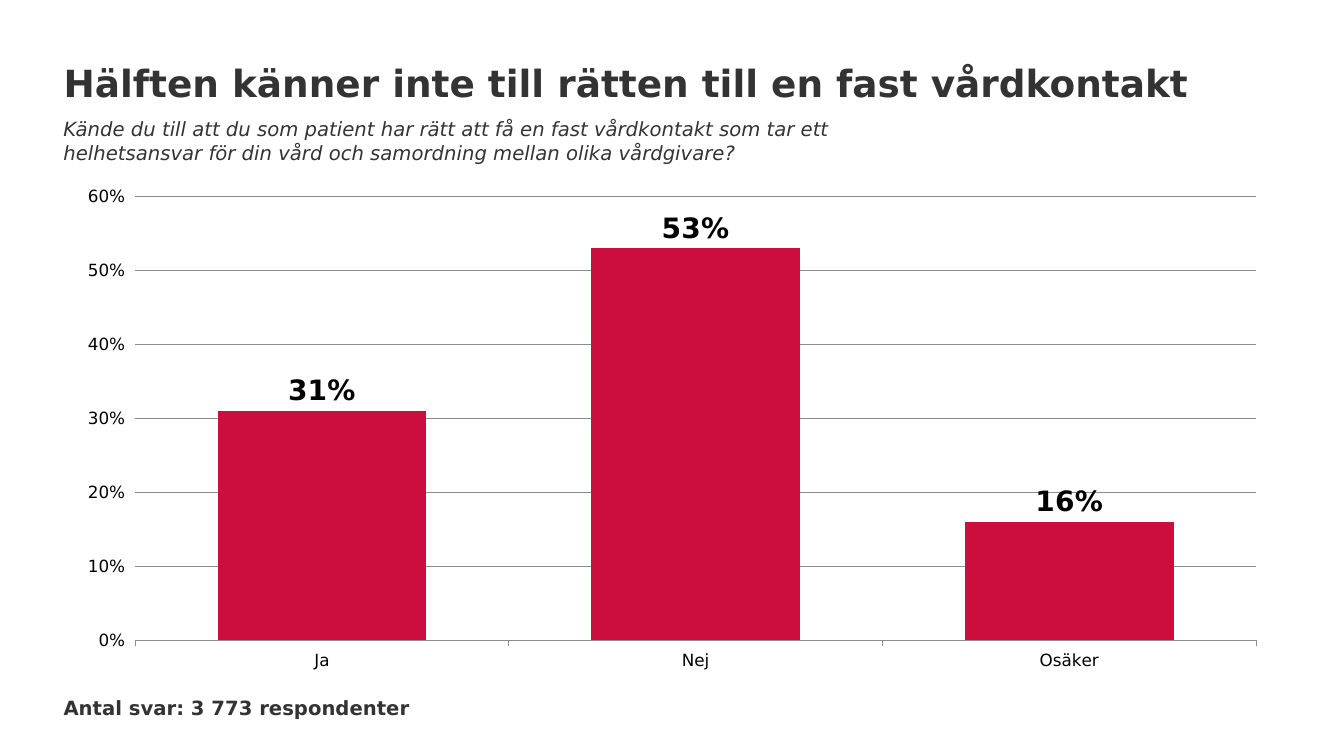
import pptx
import pptx.chart.data
import pptx.dml.color
import pptx.enum.chart
import pptx.enum.text
import pptx.util
from pptx.util import Inches, Pt

# Content
HEADING = "Hälften känner inte till rätten till en fast vårdkontakt"
QUESTION = ("Kände du till att du som patient har rätt att få en fast vårdkontakt som tar ett "
            "helhetsansvar för din vård och samordning mellan olika vårdgivare?")
RESPONDENTS = "Antal svar: 3 773 respondenter"
ANSWERS = {"Ja": 0.31, "Nej": 0.53, "Osäker": 0.16}

# Style
FONT = "DejaVu Sans"
INK = pptx.dml.color.RGBColor(0x33, 0x33, 0x33)
BLACK = pptx.dml.color.RGBColor(0x00, 0x00, 0x00)
GREY = pptx.dml.color.RGBColor(0x8C, 0x8C, 0x8C)
RED = pptx.dml.color.RGBColor(0xCB, 0x0E, 0x3E)

# Layout in inches
WIDTH, HEIGHT = 13.33, 7.5
MARGIN = 0.63
CONTENT_WIDTH = WIDTH - 2 * MARGIN


def set_font(font, size, color, bold=False, italic=False):
    font.name, font.size = FONT, Pt(size)
    font.bold, font.italic = bold, italic
    font.color.rgb = color


def fill_text(box, text, size, bold=False, italic=False):
    frame = box.text_frame
    frame.word_wrap = True
    frame.auto_size = pptx.enum.text.MSO_AUTO_SIZE.NONE
    frame.vertical_anchor = pptx.enum.text.MSO_ANCHOR.TOP
    frame.margin_left = frame.margin_right = frame.margin_top = frame.margin_bottom = 0
    frame.text = text
    paragraph = frame.paragraphs[0]
    paragraph.alignment = pptx.enum.text.PP_ALIGN.LEFT
    set_font(paragraph.font, size, INK, bold, italic)


def place(top, width, height):
    return Inches(MARGIN), Inches(top), Inches(width), Inches(height)


deck = pptx.Presentation()
deck.slide_width, deck.slide_height = Inches(WIDTH), Inches(HEIGHT)
slide = deck.slides.add_slide(deck.slide_layouts[5])

# Heading, question and number of respondents
heading = slide.shapes.title
heading.left, heading.top, heading.width, heading.height = place(0.6, CONTENT_WIDTH, 0.45)
fill_text(heading, HEADING, 26.7, bold=True)
question = slide.shapes.add_textbox(*place(1.16, 7.63, 0.47))
fill_text(question, QUESTION, 14, italic=True)
respondents = slide.shapes.add_textbox(*place(6.9, 3.92, 0.24))
fill_text(respondents, RESPONDENTS, 14, bold=True)

# Chart of answers
answer_data = pptx.chart.data.CategoryChartData(number_format="0%")
answer_data.categories = list(ANSWERS)
answer_data.add_series("Series 1", list(ANSWERS.values()))
chart = slide.shapes.add_chart(pptx.enum.chart.XL_CHART_TYPE.COLUMN_CLUSTERED,
                               *place(1.75, CONTENT_WIDTH, 5), answer_data).chart
chart.has_legend = False
chart.has_title = False
set_font(chart.font, 12, BLACK)

columns = chart.plots[0]
columns.gap_width = 79
columns.vary_by_categories = False
columns.series[0].format.fill.solid()
columns.series[0].format.fill.fore_color.rgb = RED

columns.has_data_labels = True
shares = columns.data_labels
shares.show_value = True
shares.number_format, shares.number_format_is_linked = "0%", False
shares.position = pptx.enum.chart.XL_LABEL_POSITION.OUTSIDE_END
set_font(shares.font, 20, BLACK, bold=True)

# Axes, with the percentage scale on the right
answer_axis, share_axis = chart.category_axis, chart.value_axis
for axis in (answer_axis, share_axis):
    axis.major_tick_mark = pptx.enum.chart.XL_TICK_MARK.OUTSIDE
    axis.minor_tick_mark = pptx.enum.chart.XL_TICK_MARK.NONE
    set_font(axis.tick_labels.font, 12, BLACK)
answer_axis.tick_label_position = pptx.enum.chart.XL_TICK_LABEL_POSITION.LOW
answer_axis.crosses = pptx.enum.chart.XL_AXIS_CROSSES.MAXIMUM
share_axis.minimum_scale, share_axis.maximum_scale, share_axis.major_unit = 0, 0.6, 0.1
share_axis.tick_labels.number_format = "0%"
share_axis.tick_labels.number_format_is_linked = False
share_axis.format.line.fill.background()
share_axis.has_major_gridlines = True
for line in (answer_axis.format.line, share_axis.major_gridlines.format.line):
    line.color.rgb = GREY
    line.width = Pt(0.5)

deck.save("out.pptx")
